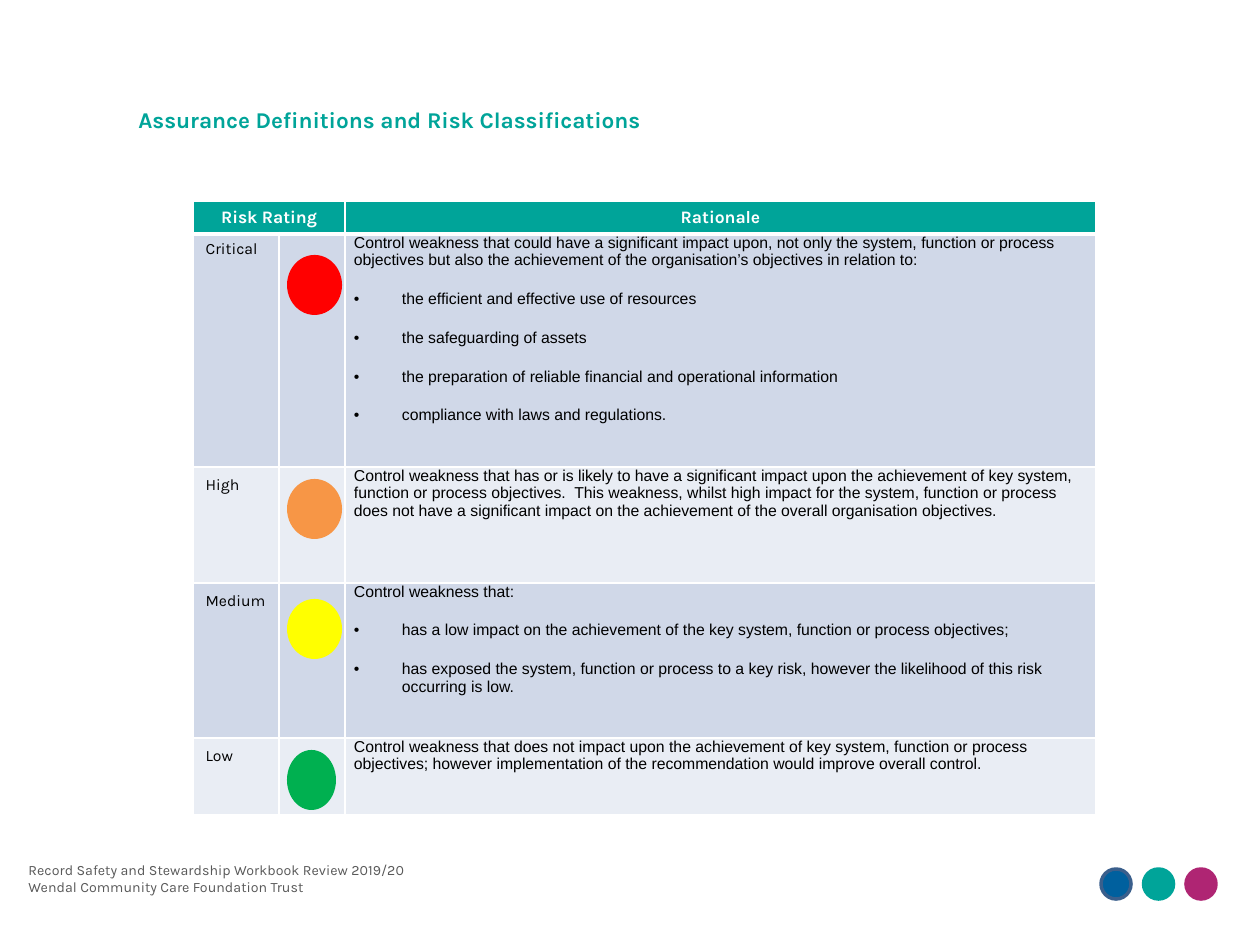
import pptx
import pptx.util
import pptx.dml.color
import pptx.enum.shapes
import pptx.enum.text
import pptx.oxml
import pptx.oxml.ns

PX = 914400 / 126
TEAL, WHITE, BLACK, GREY = "00A499", "FFFFFF", "000000", "595959"
BANDS = ["D0D8E8", "E9EDF4"]
HEAD = ["Risk Rating", "", "Rationale"]
RISKS = [
    ("Critical", "Control weakness that could have a significant impact upon, not only the system, function or process objectives but also the achievement of the organisation’s objectives in relation to:",
     ["the efficient and effective use of resources",
      "the safeguarding of assets",
      "the preparation of reliable financial and operational information",
      "compliance with laws and regulations."]),
    ("High", "Control weakness that has or is likely to have a significant impact upon the achievement of key system, function or process objectives.  This weakness, whilst high impact for the system, function or process does not have a significant impact on the achievement of the overall organisation objectives.", []),
    ("Medium", "Control weakness that:",
     ["has a low impact on the achievement of the key system, function or process objectives;",
      "has exposed the system, function or process to a key risk, however the likelihood of this risk occurring is low."]),
    ("Low", "Control weakness that does not impact upon the achievement of key system, function or process objectives; however implementation of the recommendation would improve overall control.", []),
]
COLS = [86, 66, 751]
ROWS = [33, 233, 116, 155, 77]
LEFT, TOP = 193, 201
LIGHTS = [("FF0000", 255, 55), ("F79646", 479, 55), ("FFFF00", 599, 55), ("00B050", 750, 49)]
DOTS = [("00609E", "3A5F8C"), (TEAL, TEAL), ("AF2573", "AF2573")]
TITLE = "Assurance Definitions and Risk Classifications"
FOOT = ["Record Safety and Stewardship Workbook Review 2019/20",
        "Wendal Community Care Foundation Trust"]


def px(n):
    return pptx.util.Emu(round(n * PX))


def rgb(code):
    return pptx.dml.color.RGBColor.from_string(code)


def write(para, text, size, color, font="Karla", bold=False):
    run = para.add_run()
    run.text = text
    run.font.size = pptx.util.Pt(size)
    run.font.name = font
    run.font.bold = bold
    run.font.color.rgb = rgb(color)


def space(para, before, after):
    para.space_before = pptx.util.Pt(before)
    para.space_after = pptx.util.Pt(after)


def oval(slide, x, y, w, h, fill, edge=None):
    shape = slide.shapes.add_shape(pptx.enum.shapes.MSO_SHAPE.OVAL, px(x), px(y), px(w), px(h))
    shape.shadow.inherit = False
    shape.fill.solid()
    shape.fill.fore_color.rgb = rgb(fill)
    if edge:
        shape.line.color.rgb = rgb(edge)
        shape.line.width = pptx.util.Pt(2)
    else:
        shape.line.fill.background()


def box(slide, x, y, w, h):
    frame = slide.shapes.add_textbox(px(x), px(y), px(w), px(h)).text_frame
    frame.word_wrap = True
    return frame


def paint(cell, fill, row):
    props = cell._tc.get_or_add_tcPr()
    wide = {"T": row == 1, "B": row == 0}
    for side in "LRTB":
        width = pptx.util.Pt(3 if wide.get(side) else 1)
        props.append(pptx.oxml.parse_xml(
            f'<a:ln{side} {pptx.oxml.ns.nsdecls("a")} w="{width}"><a:solidFill>'
            f'<a:srgbClr val="{WHITE}"/></a:solidFill></a:ln{side}>'))
    cell.fill.solid()
    cell.fill.fore_color.rgb = rgb(fill)


def bullet(para):
    props = para._p.get_or_add_pPr()
    props.set("marL", str(px(48)))
    props.set("indent", str(-px(48)))
    for tag in ('buFont typeface="Arial"', 'buChar char="•"'):
        props.append(pptx.oxml.parse_xml(f'<a:{tag} {pptx.oxml.ns.nsdecls("a")}/>'))


def reason(cell, lead, points):
    cell.margin_left = cell.margin_right = px(9)
    cell.margin_top = cell.margin_bottom = 0
    frame = cell.text_frame
    for i, text in enumerate([lead] + points):
        para = frame.add_paragraph() if i else frame.paragraphs[0]
        space(para, 6, 6)
        if i:
            bullet(para)
        write(para, text, 9, BLACK, "Arial")


def grid(slide):
    table = slide.shapes.add_table(len(ROWS), len(COLS), px(LEFT), px(TOP),
                                   px(sum(COLS)), px(sum(ROWS))).table
    for col, width in zip(table.columns, COLS):
        col.width = px(width)
    for r, height in enumerate(ROWS):
        table.rows[r].height = px(height)
        for cell in table.rows[r].cells:
            paint(cell, BANDS[(r - 1) % 2] if r else TEAL, r)
    table.cell(0, 0).merge(table.cell(0, 1))
    for c, text in enumerate(HEAD):
        if text:
            para = table.cell(0, c).text_frame.paragraphs[0]
            para.alignment = pptx.enum.text.PP_ALIGN.CENTER
            space(para, 3, 3)
            write(para, text, 10, WHITE, bold=True)
    for r, (name, lead, points) in enumerate(RISKS, 1):
        para = table.cell(r, 0).text_frame.paragraphs[0]
        if r > 1:
            para.line_spacing = 1.14
        if name in ("High", "Medium"):
            space(para, 3, 3)
        write(para, name, 9, BLACK)
        reason(table.cell(r, 2), lead, points)


def main():
    """Build the risk rating slide and save it."""
    deck = pptx.Presentation()
    deck.slide_width, deck.slide_height = px(1260), px(945)
    slide = deck.slides.add_slide(deck.slide_layouts[6])
    for i, (fill, edge) in enumerate(DOTS):
        oval(slide, 1101 + i * 42.5, 869, 30, 30, fill, edge)
    grid(slide)
    for fill, y, w in LIGHTS:
        oval(slide, 287, y, w, 60, fill)
    para = box(slide, 126, 96, 1062, 43).paragraphs[0]
    para.line_spacing = 1.14
    space(para, 0, 5.5)
    write(para, TITLE, 12.9, TEAL, bold=True)
    frame = box(slide, 16, 854, 421, 48)
    frame.vertical_anchor = pptx.enum.text.MSO_ANCHOR.MIDDLE
    para = frame.paragraphs[0]
    for i, text in enumerate(FOOT):
        if i:
            para.add_line_break()
        write(para, text, 8.1, GREY)
    deck.save("out.pptx")


if __name__ == "__main__":
    main()
